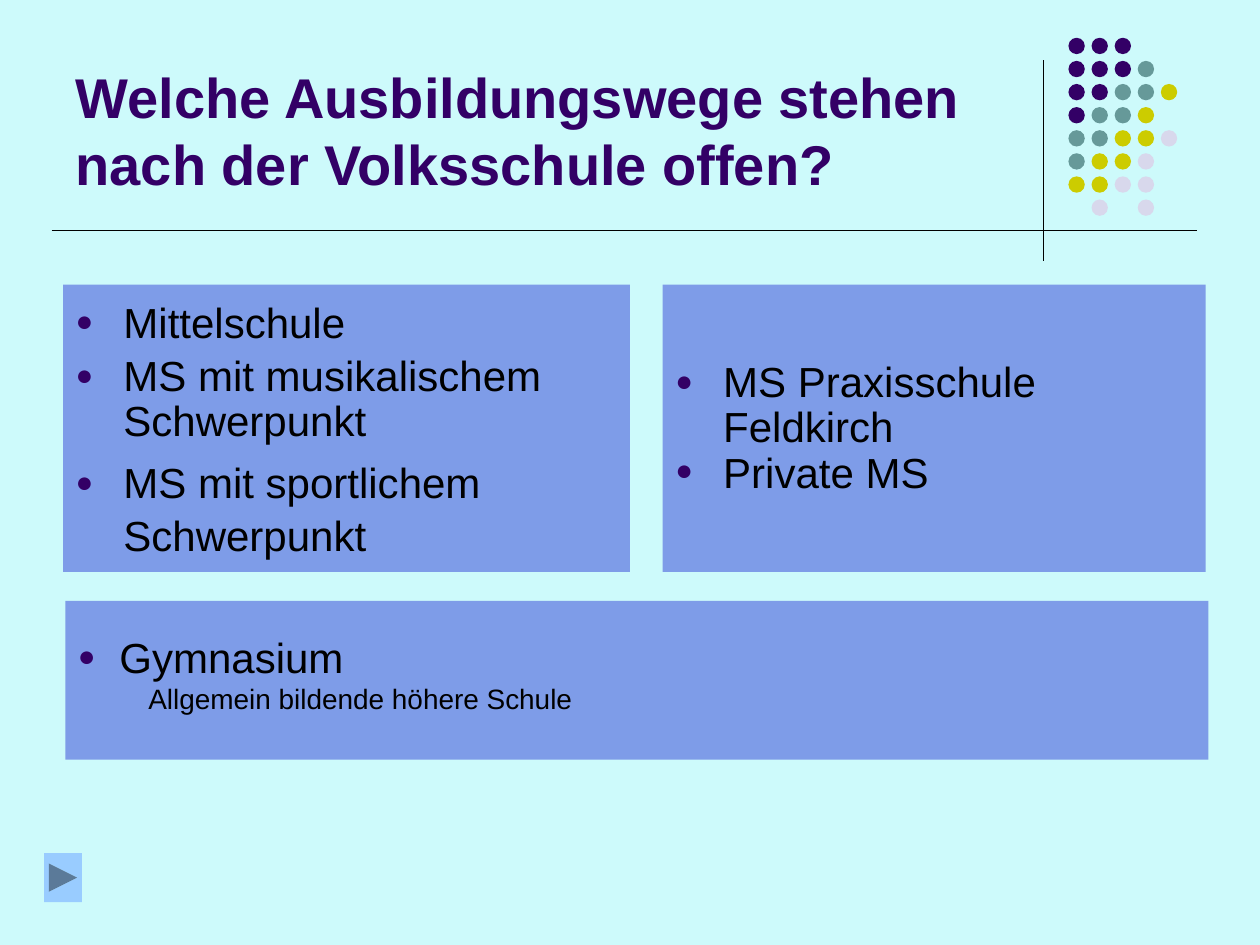
from dataclasses import dataclass

from lxml.etree import SubElement
from pptx import Presentation
from pptx.dml.color import RGBColor
from pptx.enum.shapes import MSO_CONNECTOR, MSO_SHAPE
from pptx.enum.text import MSO_ANCHOR, MSO_AUTO_SIZE, PP_ALIGN
from pptx.oxml.ns import qn
from pptx.util import Inches, Pt


@dataclass(frozen=True)
class Theme:
    font: str = "Arial"
    background: str = "CDFAFB"
    panel: str = "7E9CE8"
    accent: str = "330066"
    text: str = "000000"
    teal: str = "669999"
    yellow: str = "CCCC00"
    pale: str = "D8D8EC"
    button: str = "99CCFF"
    title_size: int = 32
    item_size: int = 24
    note_size: int = 16
    rule_width: float = 0.75


@dataclass(frozen=True)
class Item:
    text: str
    line_spacing: float = 1.0
    space_before: float = 4.8
    margin: float = 0.38
    size: int = Theme.item_size
    bulleted: bool = True


THEME = Theme()
DOT_COLORS = {"A": THEME.accent, "T": THEME.teal, "Y": THEME.yellow, "P": THEME.pale}
DOT_ROWS = ("AAA", "AAAT", "AATTY", "ATTY", "TTYYP", "TYYP", "YYPP", " P P")
DOT_SIZE = 0.13
DOT_PITCH = 0.55 / 3

LEFT_ITEMS = (
    Item("Mittelschule"),
    Item("MS mit musikalischem\nSchwerpunkt", 0.9),
    Item("MS mit sportlichem Schwerpunkt", 1.05),
)
RIGHT_ITEMS = (
    Item("MS Praxisschule\nFeldkirch", 0.9),
    Item("Private MS", 0.7),
)
GYMNASIUM_ITEMS = (
    Item("Gymnasium", space_before=0, margin=0.33),
    Item("Allgemein bildende höhere Schule", space_before=0, margin=0.56,
         size=THEME.note_size, bulleted=False),
)


def place(shape, left, top, width, height):
    shape.left, shape.top = Inches(left), Inches(top)
    shape.width, shape.height = Inches(width), Inches(height)


def fill_with(shape, color):
    shape.fill.solid()
    shape.fill.fore_color.rgb = RGBColor.from_string(color)


def format_runs(para, size, color, bold=False):
    for span in para.runs:
        span.font.name = THEME.font
        span.font.size = Pt(size)
        span.font.bold = bold
        span.font.color.rgb = RGBColor.from_string(color)


def set_bullet(para, item):
    properties = para._p.get_or_add_pPr()
    properties.set("marL", str(Inches(item.margin)))
    properties.set("indent", str(-Inches(item.margin) if item.bulleted else 0))
    if not item.bulleted:
        SubElement(properties, qn("a:buNone"))
        return
    bullet_color = SubElement(properties, qn("a:buClr"))
    SubElement(bullet_color, qn("a:srgbClr"), val=THEME.accent)
    SubElement(properties, qn("a:buSzPct"), val="70000")
    SubElement(properties, qn("a:buFont"), typeface=THEME.font)
    SubElement(properties, qn("a:buChar"), char="●")


def fill_panel(box, items):
    """Colour a box and write its list, centred vertically."""
    fill_with(box, THEME.panel)
    frame = box.text_frame
    frame.word_wrap = True
    frame.auto_size = MSO_AUTO_SIZE.NONE
    frame.vertical_anchor = MSO_ANCHOR.MIDDLE
    for index, item in enumerate(items):
        para = frame.add_paragraph() if index else frame.paragraphs[0]
        para.text = item.text
        para.alignment = PP_ALIGN.LEFT
        para.line_spacing = item.line_spacing
        para.space_before = Pt(item.space_before)
        set_bullet(para, item)
        format_runs(para, item.size, THEME.text)


def add_plain_shape(shapes, kind, bounds, color):
    shape = shapes.add_shape(kind, *map(Inches, bounds))
    shape.shadow.inherit = False
    shape.line.fill.background()
    fill_with(shape, color)
    return shape


def add_rule(page, *ends):
    rule = page.shapes.add_connector(MSO_CONNECTOR.STRAIGHT, *map(Inches, ends))
    rule.line.color.rgb = RGBColor.from_string(THEME.text)
    rule.line.width = Pt(THEME.rule_width)
    SubElement(rule._element.spPr, qn("a:effectLst"))


def add_dots(page, left, top):
    group = page.shapes.add_group_shape()
    for row, codes in enumerate(DOT_ROWS):
        for column, code in enumerate(codes):
            if code in DOT_COLORS:
                bounds = (left + column * DOT_PITCH, top + row * DOT_PITCH,
                          DOT_SIZE, DOT_SIZE)
                add_plain_shape(group.shapes, MSO_SHAPE.OVAL, bounds, DOT_COLORS[code])


def set_title(page, text):
    title = page.shapes.title
    place(title, 0.5, 0.19, 7.65, 1.42)
    frame = title.text_frame
    frame.text = text
    frame.word_wrap = True
    frame.auto_size = MSO_AUTO_SIZE.NONE
    frame.vertical_anchor = MSO_ANCHOR.BOTTOM
    para = frame.paragraphs[0]
    para.alignment = PP_ALIGN.LEFT
    format_runs(para, THEME.title_size, THEME.accent, bold=True)


def main():
    deck = Presentation()
    deck.slide_width, deck.slide_height = Inches(10), Inches(7.5)
    page = deck.slides.add_slide(deck.slide_layouts.get_by_name("Two Content"))
    fill_with(page.background, THEME.background)

    add_rule(page, 8.28, 0.48, 8.28, 2.07)
    add_dots(page, 8.48, 0.3)
    add_rule(page, 0.41, 1.83, 9.5, 1.83)
    set_title(page, "Welche Ausbildungswege stehen nach der Volksschule offen?")

    left_box, right_box = page.placeholders[1], page.placeholders[2]
    place(left_box, 0.5, 2.26, 4.5, 2.28)
    place(right_box, 5.26, 2.26, 4.31, 2.28)
    fill_panel(left_box, LEFT_ITEMS)
    fill_panel(right_box, RIGHT_ITEMS)

    gymnasium_box = add_plain_shape(
        page.shapes, MSO_SHAPE.RECTANGLE, (0.52, 4.77, 9.07, 1.26), THEME.panel)
    fill_panel(gymnasium_box, GYMNASIUM_ITEMS)
    gymnasium_box.text_frame.margin_bottom = Inches(0.16)

    add_plain_shape(page.shapes, MSO_SHAPE.ACTION_BUTTON_FORWARD_OR_NEXT,
                    (0.35, 6.77, 0.3, 0.39), THEME.button)
    deck.save("out.pptx")


if __name__ == "__main__":
    main()
